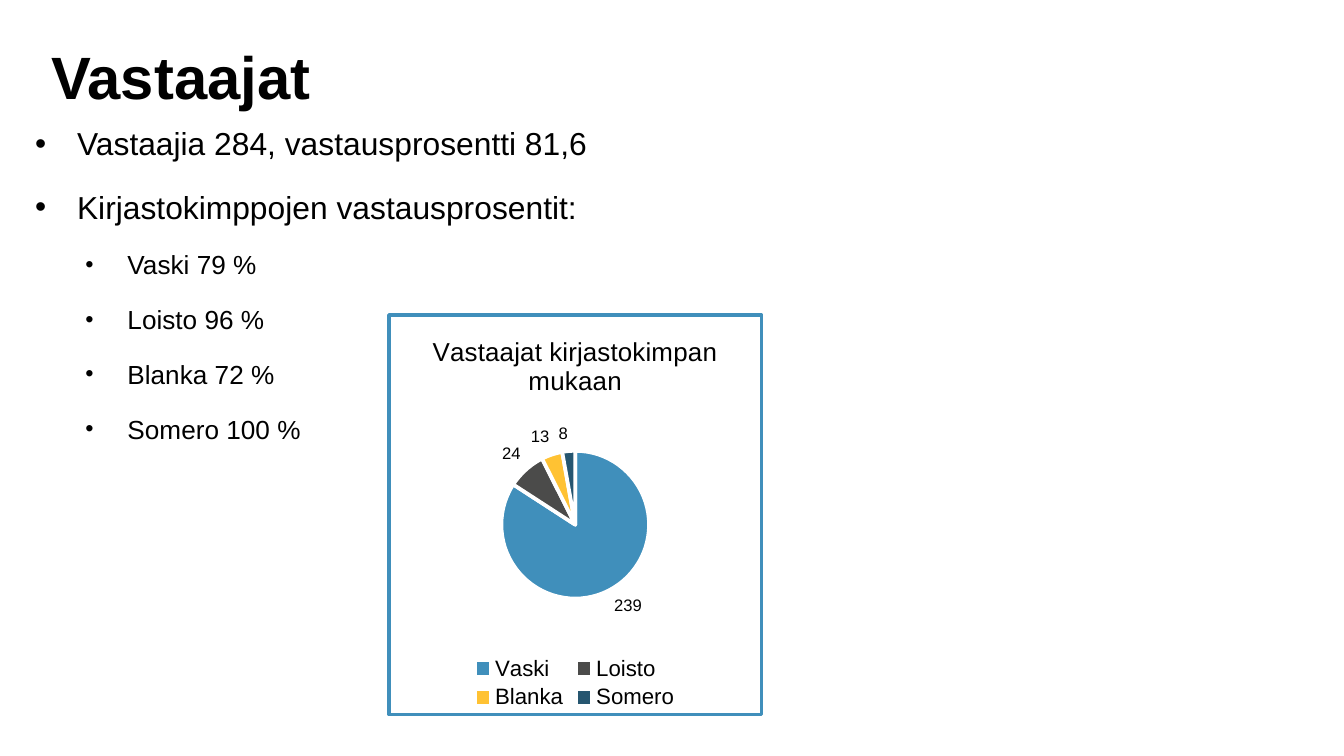
from dataclasses import dataclass
from typing import Any

from lxml.etree import SubElement
from pptx import Presentation
from pptx.chart.chart import Chart
from pptx.chart.data import CategoryChartData
from pptx.dml.color import RGBColor
from pptx.enum.chart import XL_CHART_TYPE, XL_LABEL_POSITION, XL_LEGEND_POSITION
from pptx.enum.text import MSO_ANCHOR, MSO_AUTO_SIZE, PP_ALIGN
from pptx.oxml import parse_xml
from pptx.oxml.ns import nsdecls, qn
from pptx.util import Pt

FONT = "Arial"
COLORS = {
    "text": "000000",
    "white": "FFFFFF",
    "Vaski": "408FBB",
    "Loisto": "4B4B4A",
    "Blanka": "FFC233",
    "Somero": "265670",
}


@dataclass(frozen=True)
class Box:
    left: float
    top: float
    width: float
    height: float


@dataclass(frozen=True)
class BulletStyle:
    level: int
    size: float
    margin: float
    bullet_percent: int
    paragraph_format: dict[str, Any]


@dataclass(frozen=True)
class Bullet:
    text: str
    style: BulletStyle


@dataclass(frozen=True)
class Library:
    name: str
    respondents: int
    response_rate: int


MAIN = BulletStyle(0, 17, 24, 100, {
    "line_spacing": Pt(22), "space_before": Pt(0), "space_after": Pt(12)})
SUB = BulletStyle(1, 14, 51, 90, {
    "line_spacing": 1.0, "space_before": Pt(0.5), "space_after": Pt(12)})
HANGING = 22.5

LIBRARIES = [
    Library("Vaski", 239, 79),
    Library("Loisto", 24, 96),
    Library("Blanka", 13, 72),
    Library("Somero", 8, 100),
]
BULLETS = [
    Bullet("Vastaajia 284, vastausprosentti 81,6", MAIN),
    Bullet("Kirjastokimppojen vastausprosentit:", MAIN),
    *(Bullet(f"{library.name} {library.response_rate} %", SUB) for library in LIBRARIES),
]


def color(name: str) -> RGBColor:
    return RGBColor.from_string(COLORS[name])


def set_attributes(target: Any, values: dict[str, Any]) -> None:
    for name, value in values.items():
        setattr(target, name, value)


def set_font(font: Any, size: float, bold: bool = False) -> None:
    set_attributes(font, {"name": FONT, "size": Pt(size), "bold": bold})
    font.color.rgb = color("text")


def place(shape: Any, box: Box, anchor: MSO_ANCHOR) -> None:
    """Move a placeholder and remove its margins and text fitting."""
    set_attributes(shape, {
        "left": Pt(box.left), "top": Pt(box.top),
        "width": Pt(box.width), "height": Pt(box.height)})
    set_attributes(shape.text_frame, {
        "margin_left": 0, "margin_top": 0, "margin_right": 0, "margin_bottom": 0,
        "word_wrap": True, "auto_size": MSO_AUTO_SIZE.NONE, "vertical_anchor": anchor})


def write_title(shape: Any, text: str) -> None:
    paragraph = shape.text_frame.paragraphs[0]
    set_attributes(paragraph, {"alignment": PP_ALIGN.LEFT, "line_spacing": Pt(33)})
    run = paragraph.add_run()
    run.text = text
    set_font(run.font, 32, bold=True)


def write_bullet(paragraph: Any, bullet: Bullet) -> None:
    style = bullet.style
    set_attributes(paragraph, {
        "level": style.level, "alignment": PP_ALIGN.LEFT, **style.paragraph_format})
    run = paragraph.add_run()
    run.text = bullet.text
    set_font(run.font, style.size)
    properties = paragraph._p.get_or_add_pPr()
    properties.set("marL", str(Pt(style.margin)))
    properties.set("indent", str(-Pt(HANGING)))
    SubElement(properties, qn("a:buSzPct"), val=str(style.bullet_percent * 1000))
    SubElement(properties, qn("a:buFont"), typeface=FONT)
    SubElement(properties, qn("a:buChar"), char="•")


def frame_chart(chart: Chart) -> None:
    """Give the chart area a white fill and a coloured border."""
    frame = parse_xml(
        f'<c:spPr {nsdecls("c", "a")}>'
        f'<a:solidFill><a:srgbClr val="{COLORS["white"]}"/></a:solidFill>'
        f'<a:ln w="{Pt(2)}"><a:solidFill><a:srgbClr val="{COLORS["Vaski"]}"/>'
        '</a:solidFill></a:ln></c:spPr>')
    chart._chartSpace.find(qn("c:chart")).addnext(frame)


def set_plot_layout(chart: Chart, box: Box) -> None:
    """Place the pie by fractions of the chart area."""
    plot_area = chart._chartSpace.chart.plotArea
    for old_layout in plot_area.findall(qn("c:layout")):
        plot_area.remove(old_layout)
    plot_area.insert(0, parse_xml(
        f'<c:layout {nsdecls("c")}><c:manualLayout><c:layoutTarget val="inner"/>'
        '<c:xMode val="edge"/><c:yMode val="edge"/>'
        f'<c:x val="{box.left}"/><c:y val="{box.top}"/>'
        f'<c:w val="{box.width}"/><c:h val="{box.height}"/>'
        '</c:manualLayout></c:layout>'))


def add_pie(slide: Any, box: Box, title: str) -> None:
    data = CategoryChartData()
    data.categories = [library.name for library in LIBRARIES]
    data.add_series("Series 1", [library.respondents for library in LIBRARIES])
    chart = slide.shapes.add_chart(
        XL_CHART_TYPE.PIE, Pt(box.left), Pt(box.top), Pt(box.width), Pt(box.height), data).chart
    set_font(chart.font, 10)
    frame_chart(chart)
    set_plot_layout(chart, Box(0.3, 0.34, 0.4, 0.37))

    chart.has_title = True
    chart.chart_title.include_in_layout = False
    run = chart.chart_title.text_frame.paragraphs[0].add_run()
    run.text = title
    set_font(run.font, 14)

    chart.has_legend = True
    set_attributes(chart.legend, {
        "position": XL_LEGEND_POSITION.BOTTOM, "include_in_layout": False})
    set_font(chart.legend.font, 12)

    plot = chart.plots[0]
    plot.vary_by_categories = True
    plot.has_data_labels = True
    set_attributes(plot.data_labels, {
        "show_value": True, "show_percentage": False,
        "position": XL_LABEL_POSITION.OUTSIDE_END})
    set_font(plot.data_labels.font, 9)
    for index, library in enumerate(LIBRARIES):
        slice_format = plot.series[0].points[index].format
        slice_format.fill.solid()
        slice_format.fill.fore_color.rgb = color(library.name)
        slice_format.line.color.rgb = color("white")
        slice_format.line.width = Pt(2)


def main() -> None:
    presentation = Presentation()
    set_attributes(presentation, {"slide_width": Pt(720), "slide_height": Pt(405)})
    slide = presentation.slides.add_slide(presentation.slide_layouts[1])
    title, body = slide.shapes.title, slide.placeholders[1]

    place(title, Box(27.4, 18, 276.5, 41.8), MSO_ANCHOR.BOTTOM)
    write_title(title, "Vastaajat")

    place(body, Box(17.3, 64.8, 412.5, 270.7), MSO_ANCHOR.TOP)
    for index, bullet in enumerate(BULLETS):
        frame = body.text_frame
        write_bullet(frame.add_paragraph() if index else frame.paragraphs[0], bullet)

    add_pie(slide, Box(207.4, 167.8, 201.6, 216), "Vastaajat kirjastokimpan mukaan")
    presentation.save("out.pptx")


if __name__ == "__main__":
    main()
